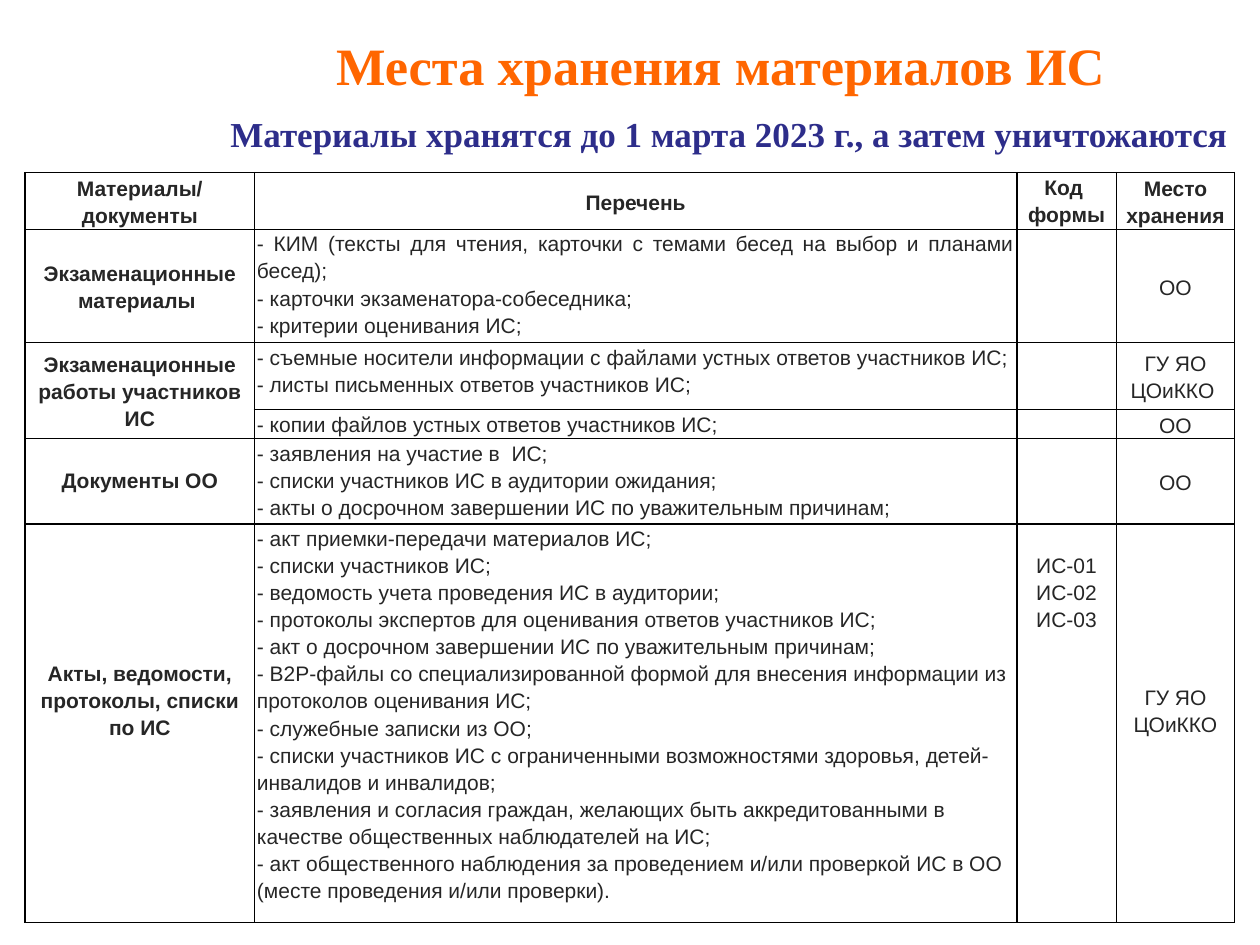
from lxml.etree import SubElement
from pptx import Presentation
from pptx.dml.color import RGBColor
from pptx.enum.text import MSO_ANCHOR as Anchor, MSO_AUTO_SIZE as AutoSize, PP_ALIGN as Align
from pptx.oxml.ns import qn
from pptx.util import Inches, Pt

ORANGE = RGBColor(0xFF, 0x66, 0x00)
NAVY = RGBColor(0x2D, 0x2D, 0x8A)
GRAPHITE = RGBColor(0x26, 0x26, 0x26)
BLACK = RGBColor(0x00, 0x00, 0x00)

GRID_COLUMNS, GRID_ROWS = 100, 75
TEXT_LINE = 2.14  # height of one table text line, in grid rows

COLUMN_WIDTHS = [18.2, 60.5, 7.9, 9.4]
ROW_HEIGHTS = [4.5, 9, 5.3, 2.3, 6.8, 31.6]


def content(*lines, align=Align.CENTER, bold=False, anchor=Anchor.MIDDLE, above=0, below=0):
    """Describe a cell; above and below count text lines kept free."""
    return dict(lines=lines, align=align, bold=bold, anchor=anchor, above=above, below=below)


def heading(*lines, **options):
    return content(*lines, bold=True, **options)


def listing(*lines, align=Align.LEFT):
    return content(*lines, align=align, anchor=Anchor.TOP)


EMPTY = content()
STORAGE_ROWS = [
    [
        heading("Материалы/ документы"),
        heading("Перечень"),
        heading("Код ", "формы", anchor=Anchor.TOP),
        heading("Место хранения"),
    ],
    [
        heading("Экзаменационные материалы "),
        listing(
            "- КИМ (тексты для чтения, карточки с темами бесед на выбор и планами бесед);",
            "- карточки экзаменатора-собеседника;",
            "- критерии оценивания ИС;",
            align=Align.JUSTIFY,
        ),
        EMPTY,
        content("ОО"),
    ],
    [
        heading("Экзаменационные работы участников ИС"),
        listing(
            "- съемные носители информации с файлами устных ответов участников ИС;",
            "- листы письменных ответов участников ИС;",
        ),
        EMPTY,
        content("ГУ ЯО ЦОиККО "),
    ],
    [
        EMPTY,
        listing("- копии файлов устных ответов участников ИС;"),
        EMPTY,
        content("ОО"),
    ],
    [
        heading("Документы ОО", anchor=Anchor.TOP, above=1),
        listing(
            "- заявления на участие в  ИС;",
            "- списки участников ИС в аудитории ожидания;",
            "- акты о досрочном завершении ИС по уважительным причинам;",
        ),
        EMPTY,
        content("ОО"),
    ],
    [
        heading("Акты, ведомости, протоколы, списки по ИС", anchor=Anchor.TOP, above=5),
        listing(
            "- акт приемки-передачи материалов ИС;",
            "- списки участников ИС;",
            "- ведомость учета проведения ИС в аудитории;",
            "- протоколы экспертов для оценивания ответов участников ИС;",
            "- акт о досрочном завершении ИС по уважительным причинам;",
            "- B2P-файлы со специализированной формой для внесения информации из протоколов оценивания ИС;",
            "- служебные записки из ОО;",
            "- списки участников ИС с ограниченными возможностями здоровья, детей-инвалидов и инвалидов;",
            "- заявления и согласия граждан, желающих быть аккредитованными в качестве общественных наблюдателей на ИС;",
            "- акт общественного наблюдения за проведением и/или проверкой ИС в ОО (месте проведения и/или проверки).",
        ),
        content("ИС-01", "ИС-02", "ИС-03", anchor=Anchor.TOP, above=1),
        content("ГУ ЯО ЦОиККО", below=1),
    ],
]


class SlideBuilder:
    heading_font = "Times New Roman"
    table_font = "Arial"
    table_size = 12
    line_spacing = 1.15
    border_width = Pt(1)

    def __init__(self, presentation):
        self.column = presentation.slide_width / GRID_COLUMNS
        self.row = presentation.slide_height / GRID_ROWS
        self.slide = presentation.slides.add_slide(presentation.slide_layouts[5])

    def columns(self, count):
        return round(count * self.column)

    def rows(self, count):
        return round(count * self.row)

    def box(self, left, top, width, height):
        return self.columns(left), self.rows(top), self.columns(width), self.rows(height)

    def run(self, paragraph, text, font, size, color, bold):
        run = paragraph.add_run()
        run.text = text
        run.font.name, run.font.size, run.font.bold = font, Pt(size), bold
        run.font.color.rgb = color

    def title(self, text, *place):
        shape = self.slide.shapes.title
        shape.left, shape.top, shape.width, shape.height = self.box(*place)
        shape.text_frame.vertical_anchor = Anchor.MIDDLE
        paragraph = shape.text_frame.paragraphs[0]
        paragraph.alignment = Align.CENTER
        self.run(paragraph, text, self.heading_font, 30, ORANGE, True)

    def subtitle(self, text, *place):
        frame = self.slide.shapes.add_textbox(*self.box(*place)).text_frame
        frame.word_wrap = True
        frame.auto_size = AutoSize.SHAPE_TO_FIT_TEXT
        self.run(frame.paragraphs[0], text, self.heading_font, 20, NAVY, True)

    def table(self, cells, left, top):
        place = self.box(left, top, sum(COLUMN_WIDTHS), sum(ROW_HEIGHTS))
        table = self.slide.shapes.add_table(len(ROW_HEIGHTS), len(COLUMN_WIDTHS), *place).table
        table.first_row = table.horz_banding = False
        for column, width in zip(table.columns, COLUMN_WIDTHS):
            column.width = self.columns(width)
        for row, height, contents in zip(table.rows, ROW_HEIGHTS, cells):
            row.height = self.rows(height)
            for cell, cell_content in zip(row.cells, contents):
                self.fill_cell(cell, **cell_content)
        return table

    def fill_cell(self, cell, lines, align, bold, anchor, above, below):
        cell.margin_left = cell.margin_right = Inches(0.02)
        cell.margin_top = self.rows(above * TEXT_LINE)
        cell.margin_bottom = self.rows(below * TEXT_LINE)
        cell.vertical_anchor = anchor
        self.border(cell)
        cell.fill.background()
        frame = cell.text_frame
        for index, line in enumerate(lines):
            paragraph = frame.add_paragraph() if index else frame.paragraphs[0]
            paragraph.alignment = align
            paragraph.line_spacing = self.line_spacing
            self.run(paragraph, line, self.table_font, self.table_size, GRAPHITE, bold)
        if not lines:
            # An empty cell must not push its row taller than the text rows
            end = SubElement(frame.paragraphs[0]._p, qn("a:endParaRPr"))
            end.set("sz", str(self.table_size * 100))

    def border(self, cell):
        properties = cell._tc.get_or_add_tcPr()
        for side in ("a:lnL", "a:lnR", "a:lnT", "a:lnB"):
            line = SubElement(properties, qn(side), w=str(self.border_width))
            fill = SubElement(line, qn("a:solidFill"))
            SubElement(fill, qn("a:srgbClr"), val=str(BLACK))


def main():
    presentation = Presentation()
    presentation.slide_width, presentation.slide_height = Inches(10), Inches(7.5)
    builder = SlideBuilder(presentation)
    builder.title("Места хранения материалов ИС", 12.2, -1.1, 90, 12.5)
    table = builder.table(STORAGE_ROWS, 2, 13.7)
    table.cell(2, 0).merge(table.cell(3, 0))
    builder.subtitle("Материалы хранятся до 1 марта 2023 г., а затем уничтожаются", 17.3, 8.4, 82.7, 4.4)
    presentation.save("out.pptx")


if __name__ == "__main__":
    main()
